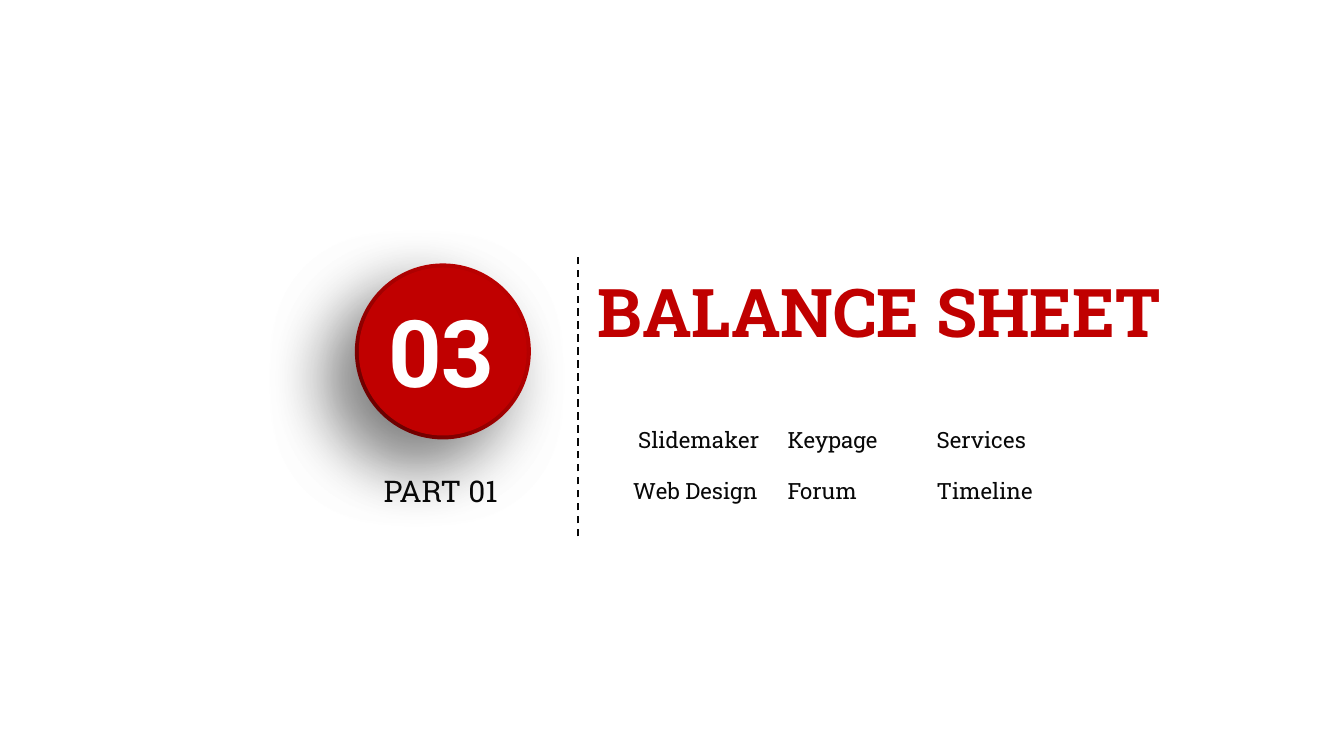
from dataclasses import dataclass

from lxml import etree
from pptx import Presentation
from pptx.dml.color import RGBColor
from pptx.enum import dml, shapes, text
from pptx.oxml.ns import qn
from pptx.slide import Slide
from pptx.util import Pt

COLORS = {"red": "C00000", "ink": "080808", "white": "FFFFFF", "shadow": "000000"}
FONT = "Roboto Slab"


@dataclass
class Label:
    wording: str
    left: float
    top: float
    width: float
    height: float
    size: float
    color: str = "ink"
    bold: bool = False
    centered: bool = False
    inset_x: float = 0
    inset_y: float = 0


@dataclass
class Disc:
    kind: shapes.MSO_SHAPE
    left: float
    top: float
    diameter: float


def rgb(name: str) -> RGBColor:
    return RGBColor.from_string(COLORS[name])


def draw_label(slide: Slide, label: Label) -> None:
    box = slide.shapes.add_textbox(
        Pt(label.left), Pt(label.top), Pt(label.width), Pt(label.height))
    frame = box.text_frame
    frame.word_wrap = True
    frame.margin_left = frame.margin_right = Pt(label.inset_x)
    frame.margin_top = frame.margin_bottom = Pt(label.inset_y)
    frame.text = label.wording
    line = frame.paragraphs[0]
    line.alignment = text.PP_ALIGN.CENTER if label.centered else text.PP_ALIGN.LEFT
    font = line.runs[0].font
    font.name, font.size, font.bold = FONT, Pt(label.size), label.bold
    font.color.rgb = rgb(label.color)


def draw_disc(slide: Slide, disc: Disc) -> None:
    badge = slide.shapes.add_shape(
        disc.kind, Pt(disc.left), Pt(disc.top), Pt(disc.diameter), Pt(disc.diameter))
    badge.fill.solid()
    badge.fill.fore_color.rgb = rgb("red")
    badge.line.fill.background()
    if disc.kind == shapes.MSO_SHAPE.DONUT:
        badge.adjustments[0] = 0.05

    # Soft shadow towards the lower left
    badge.shadow.inherit = False
    effects = badge.element.spPr.find(qn("a:effectLst"))
    shadow = etree.SubElement(
        effects, qn("a:outerShdw"), blurRad=str(Pt(35)), dist=str(Pt(20)),
        dir=str(135 * 60000), algn="tr", rotWithShape="0")
    tint = etree.SubElement(shadow, qn("a:srgbClr"), val=COLORS["shadow"])
    etree.SubElement(tint, qn("a:alpha"), val="50000")


def draw_divider(slide: Slide, x: float, top: float, bottom: float) -> None:
    divider = slide.shapes.add_connector(
        shapes.MSO_CONNECTOR.STRAIGHT, Pt(x), Pt(bottom), Pt(x), Pt(top))
    divider.line.color.rgb = rgb("ink")
    divider.line.width = Pt(1)
    divider.line.dash_style = dml.MSO_LINE.DASH
    etree.SubElement(divider.element.spPr, qn("a:effectLst"))


def main() -> None:
    deck = Presentation()
    deck.slide_width, deck.slide_height = Pt(720), Pt(405)
    slide = deck.slides.add_slide(deck.slide_layouts[6])

    # Title and divider
    draw_label(slide, Label("BALANCE SHEET", 308.9, 141.1, 324.7, 51.1, 36, "red",
                            bold=True, centered=True, inset_x=7.2, inset_y=3.6))
    draw_divider(slide, 309.6, 137, 287.3)

    # Section badge: rim, face, caption and number
    draw_disc(slide, Disc(shapes.MSO_SHAPE.DONUT, 190.1, 141.1, 94.3))
    draw_disc(slide, Disc(shapes.MSO_SHAPE.OVAL, 192.2, 143.3, 90))
    draw_label(slide, Label("PART 01", 205.5, 253.5, 71.3, 19.4, 16))
    draw_label(slide, Label("03", 208.1, 157.7, 71.3, 60.5, 50, "white", bold=True))

    # Topic grid, with the first topic slightly indented
    topic_lefts = (334.1, 416.9, 496.8)
    topic_tops = (226.1, 253.5)
    topics = (("Slidemaker", "Keypage", "Services"),
              ("Web Design", "Forum", "Timeline"))
    for top, row in zip(topic_tops, topics):
        for left, topic in zip(topic_lefts, row):
            indent = 2.8 if topic == topics[0][0] else 0
            draw_label(slide, Label(topic, left + indent, top, 82, 19.4, 12,
                                    inset_x=5, inset_y=2.2))

    deck.save("out.pptx")


if __name__ == "__main__":
    main()
